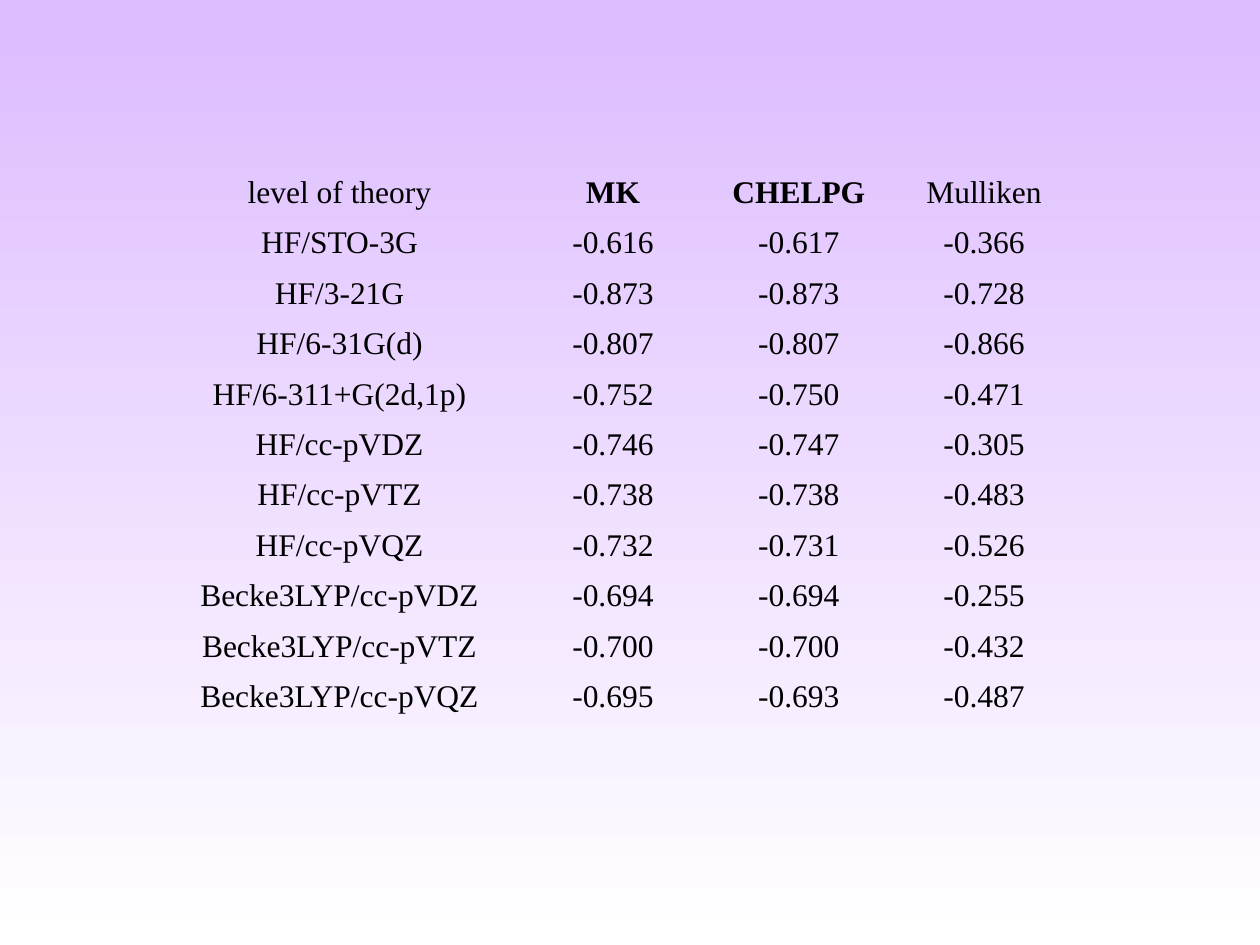
from pptx import Presentation
from pptx.dml.color import RGBColor
from pptx.enum.text import MSO_ANCHOR, PP_ALIGN
from pptx.util import Inches, Pt

CENTER = PP_ALIGN.CENTER
MIDDLE = MSO_ANCHOR.MIDDLE
BLANK_LAYOUT = 6
NO_STYLE_NO_GRID = "{2D5ABB26-0587-4C30-8999-92F81FD0307C}"

COLUMN_WIDTHS = [2.89, 1.45, 1.5, 1.5]
ROW_HEIGHT = 0.4
HEADINGS = ["level of theory", "MK", "CHELPG", "Mulliken"]
BOLD_HEADINGS = {"MK", "CHELPG"}
CHARGES = [
    ("HF/STO-3G", "-0.616", "-0.617", "-0.366"),
    ("HF/3-21G", "-0.873", "-0.873", "-0.728"),
    ("HF/6-31G(d)", "-0.807", "-0.807", "-0.866"),
    ("HF/6-311+G(2d,1p)", "-0.752", "-0.750", "-0.471"),
    ("HF/cc-pVDZ", "-0.746", "-0.747", "-0.305"),
    ("HF/cc-pVTZ", "-0.738", "-0.738", "-0.483"),
    ("HF/cc-pVQZ", "-0.732", "-0.731", "-0.526"),
    ("Becke3LYP/cc-pVDZ", "-0.694", "-0.694", "-0.255"),
    ("Becke3LYP/cc-pVTZ", "-0.700", "-0.700", "-0.432"),
    ("Becke3LYP/cc-pVQZ", "-0.695", "-0.693", "-0.487"),
]


def color(hex_string):
    return RGBColor.from_string(hex_string)


def write_text(cell, text, size=18, font="Times New Roman", fill="000000", bold=False):
    paragraph = cell.text_frame.paragraphs[0]
    paragraph.alignment = CENTER
    run = paragraph.add_run()
    run.text = text
    run.font.size = Pt(size)
    run.font.name = font
    run.font.bold = bold
    run.font.color.rgb = color(fill)


presentation = Presentation()
presentation.slide_width = Inches(10)
presentation.slide_height = Inches(7.5)
slide = presentation.slides.add_slide(presentation.slide_layouts[BLANK_LAYOUT])

# Background fades from violet at the top to white at the bottom
background = slide.background.fill
background.gradient()
background.gradient_angle = 270
for stop, position, shade in zip(background.gradient_stops, (0, 1), ("DDBBFF", "FFFFFF")):
    stop.position = position
    stop.color.rgb = color(shade)

# Table of charges, without grid or banding
rows = [HEADINGS, *CHARGES]
table_frame = slide.shapes.add_table(
    len(rows), len(HEADINGS), Inches(1.25), Inches(1.33),
    Inches(sum(COLUMN_WIDTHS)), Inches(ROW_HEIGHT * len(rows)))
table = table_frame.table
table.first_row = False
table.horz_banding = False
table._tbl.tblPr.find("{*}tableStyleId").text = NO_STYLE_NO_GRID

for column, width in zip(table.columns, COLUMN_WIDTHS):
    column.width = Inches(width)

for row_index, row in enumerate(rows):
    table.rows[row_index].height = Inches(ROW_HEIGHT)
    for column_index, text in enumerate(row):
        cell = table.cell(row_index, column_index)
        cell.fill.background()
        cell.vertical_anchor = MIDDLE
        # The last column sits slightly left of its centre
        if column_index == len(row) - 1:
            cell.margin_right = Inches(0.16)
        write_text(cell, text, bold=text in BOLD_HEADINGS)

presentation.save("out.pptx")
